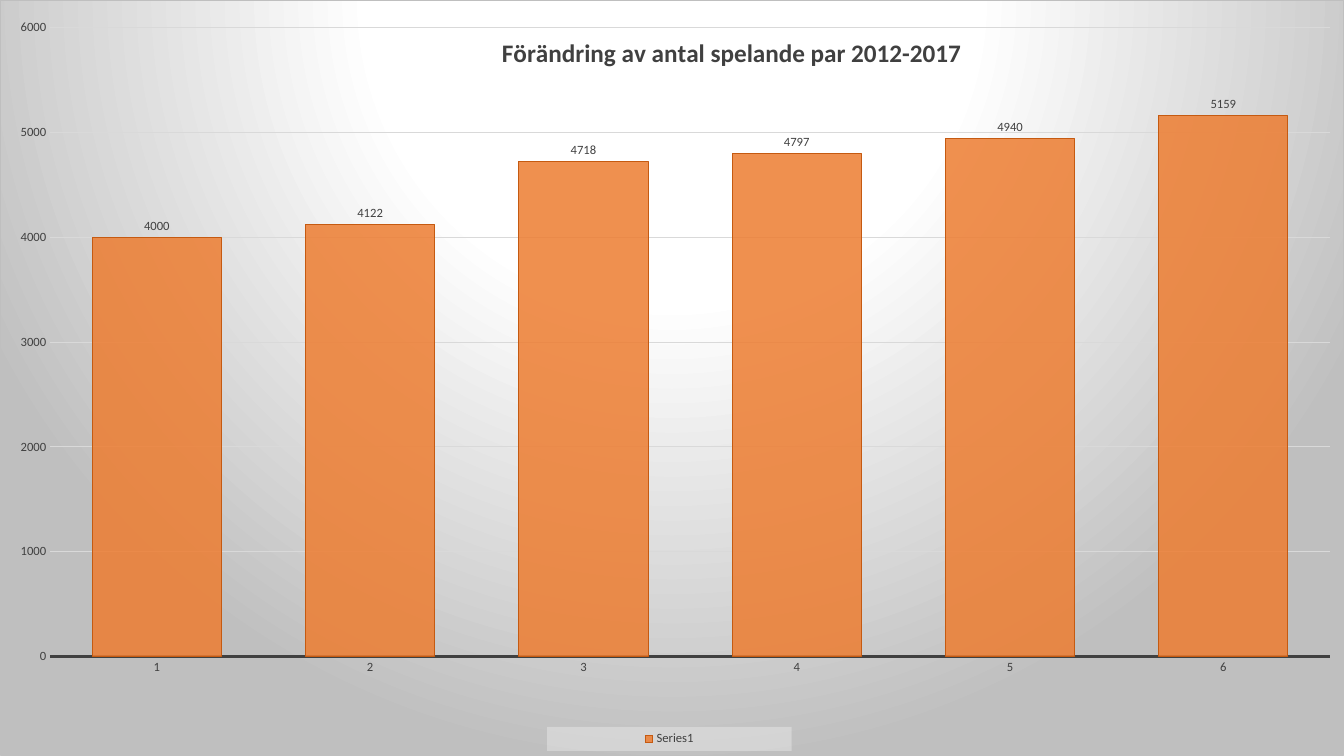
from pptx import Presentation
from pptx.chart.data import CategoryChartData
from pptx.dml.color import RGBColor
from pptx.enum.chart import XL_CHART_TYPE as ChartType
from pptx.enum.chart import XL_LABEL_POSITION as LabelPos
from pptx.enum.chart import XL_LEGEND_POSITION as LegendPos
from pptx.enum.chart import XL_TICK_MARK as TickMark
from pptx.oxml import parse_xml
from pptx.oxml.ns import nsdecls, qn
from pptx.util import Inches, Pt

WHITE = RGBColor(0xFF, 0xFF, 0xFF)
TEXT = RGBColor(0x40, 0x40, 0x40)
GRID = RGBColor(0xD9, 0xD9, 0xD9)
EDGE = RGBColor(0xBF, 0xBF, 0xBF)
LEGEND_FILL = RGBColor(0xF2, 0xF2, 0xF2)
BAR = RGBColor(0xED, 0x7D, 0x31)
BAR_LINE = RGBColor(0xC5, 0x5A, 0x11)

WIDTH, HEIGHT = Inches(13.33), Inches(7.5)
PAIRS = (4000, 4122, 4718, 4797, 4940, 5159)


class ChartSlide:
    font_name = "Calibri"

    def __init__(self, prs):
        self.slide = prs.slides.add_slide(prs.slide_layouts[6])

    def style_font(self, font, size=9, bold=False):
        font.name = self.font_name
        font.size = Pt(size)
        font.bold = bold
        font.color.rgb = TEXT

    def style_line(self, line, color, width=0.75):
        line.color.rgb = color
        line.width = Pt(width)

    def set_layout(self, parent, x, y, w=None, h=None, after=None, inner=False):
        for old in parent.findall(qn("c:layout")):
            parent.remove(old)
        target = '<c:layoutTarget val="inner"/>' if inner else ""
        modes = '<c:xMode val="edge"/><c:yMode val="edge"/>'
        sizes = "".join(f'<c:{name} val="{value}"/>'
                        for name, value in zip("xywh", (x, y, w, h))
                        if value is not None)
        layout = parse_xml(f'<c:layout {nsdecls("c")}><c:manualLayout>'
                           f'{target}{modes}{sizes}</c:manualLayout></c:layout>')
        if after:
            parent.find(qn(after)).addnext(layout)
        else:
            parent.insert(0, layout)

    def add_columns(self, values):
        data = CategoryChartData()
        data.categories = [str(i) for i in range(1, len(values) + 1)]
        data.add_series("Series1", values)
        frame = self.slide.shapes.add_chart(
            ChartType.COLUMN_CLUSTERED, 0, 0, WIDTH, HEIGHT, data)
        self.chart = frame.chart
        self.style_font(self.chart.font, 10)
        plot = self.chart.plots[0]
        plot.gap_width = 65
        plot.vary_by_categories = False
        series = plot.series[0]
        series.invert_if_negative = False
        series.format.fill.solid()
        series.format.fill.fore_color.rgb = BAR
        self.style_line(series.format.line, BAR_LINE)
        color = series._element.xpath("./c:spPr/a:solidFill/a:srgbClr")[0]
        color.append(parse_xml(f'<a:alpha {nsdecls("a")} val="85000"/>'))
        labels = series.data_labels
        labels.show_value = True
        labels.position = LabelPos.OUTSIDE_END
        self.style_font(labels.font)
        area = self.chart._chartSpace.chart.plotArea
        self.set_layout(area, 0.037, 0.036, 0.953, 0.833, inner=True)

    def format_axes(self):
        category, value = self.chart.category_axis, self.chart.value_axis
        for axis in (category, value):
            axis.major_tick_mark = TickMark.NONE
            axis.minor_tick_mark = TickMark.NONE
            self.style_font(axis.tick_labels.font)
        category.has_major_gridlines = False
        self.style_line(category.format.line, TEXT, 1.5)
        value.minimum_scale, value.maximum_scale = 0, 6000
        value.major_unit = 1000
        value.format.line.fill.background()
        value.has_major_gridlines = True
        self.style_line(value.major_gridlines.format.line, GRID)

    def add_title(self, text):
        self.chart.has_title = True
        title = self.chart.chart_title
        r = title.text_frame.paragraphs[0].add_run()
        r.text = text
        self.style_font(r.font, 18, True)
        self.set_layout(title._element, 0.37, 0.04, after="c:tx")

    def add_legend(self):
        self.chart.has_legend = True
        legend = self.chart.legend
        legend.position = LegendPos.BOTTOM
        legend.include_in_layout = False
        self.style_font(legend.font)
        element = legend._element
        self.set_layout(element, 0.407, 0.962, 0.182, 0.032, after="c:legendPos")
        element.find(qn("c:overlay")).addnext(parse_xml(
            f'<c:spPr {nsdecls("c", "a")}><a:solidFill>'
            f'<a:srgbClr val="{LEGEND_FILL}"><a:alpha val="39000"/></a:srgbClr>'
            '</a:solidFill><a:ln><a:noFill/></a:ln></c:spPr>'))

    def add_background(self):
        stops = "".join(f'<a:gs pos="{pos * 1000}"><a:srgbClr val="{color}"/></a:gs>'
                        for pos, color in ((0, WHITE), (39, WHITE), (100, EDGE)))
        self.chart._chartSpace.chart.addnext(parse_xml(
            f'<c:spPr {nsdecls("c", "a")}><a:gradFill><a:gsLst>{stops}</a:gsLst>'
            '<a:path path="circle">'
            '<a:fillToRect l="50000" t="-80000" r="50000" b="180000"/></a:path>'
            f'</a:gradFill><a:ln w="{Pt(0.75)}"><a:solidFill>'
            f'<a:srgbClr val="{EDGE}"/></a:solidFill></a:ln></c:spPr>'))


def main():
    prs = Presentation()
    prs.slide_width, prs.slide_height = WIDTH, HEIGHT
    s = ChartSlide(prs)
    s.add_columns(PAIRS)
    s.format_axes()
    s.add_title("Förändring av antal spelande par 2012-2017")
    s.add_legend()
    s.add_background()
    prs.save("out.pptx")


if __name__ == "__main__":
    main()
